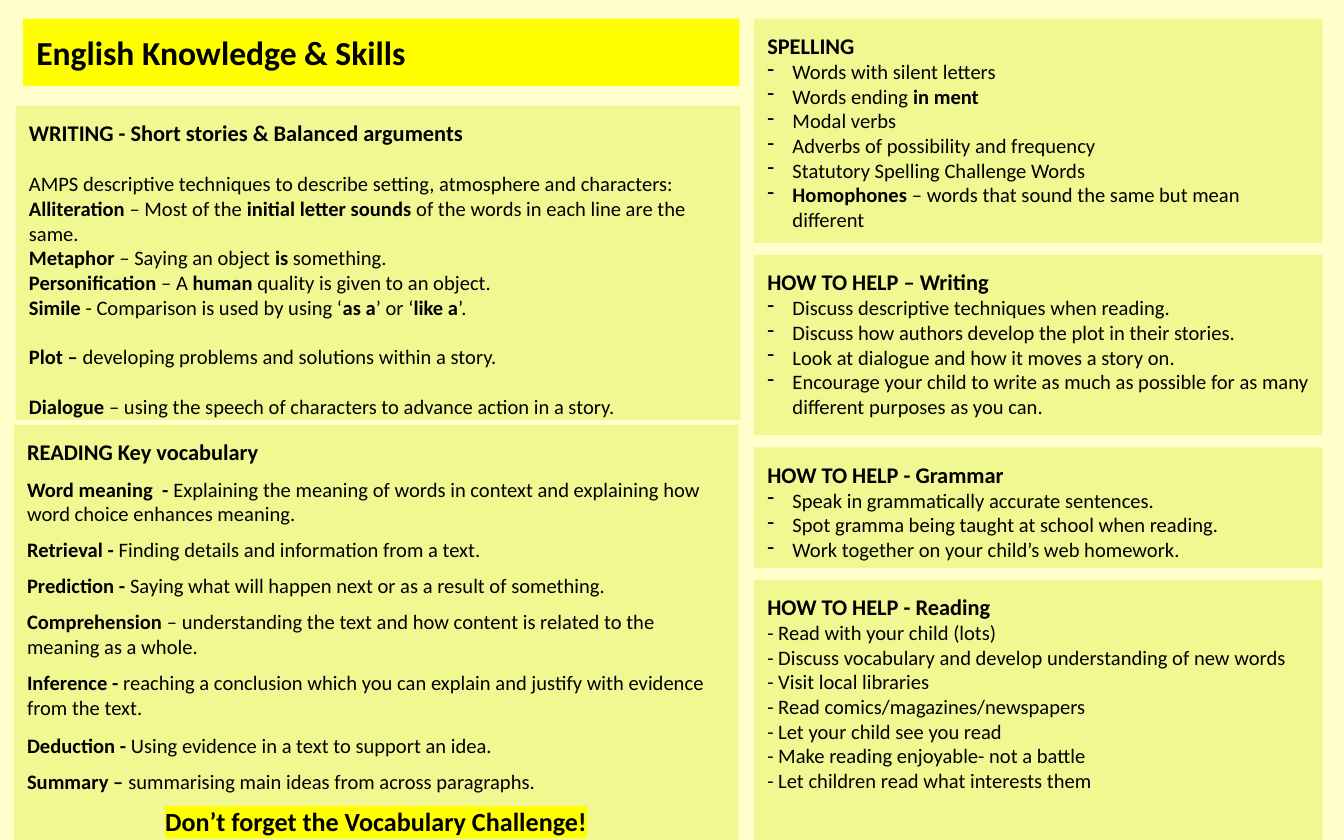
from pptx import Presentation
from pptx.dml.color import RGBColor
from pptx.enum.shapes import MSO_SHAPE
from pptx.enum.text import MSO_ANCHOR, PP_ALIGN
from pptx.util import Pt
from lxml.etree import SubElement
from pptx.oxml.ns import qn
from pptx.oxml import parse_xml

COLORS = {"page": "FFFFCC", "panel": "F1F892", "accent": "FFFF00", "text": "000000"}
FONT = "Calibri"
BODY, HEAD = 11, 12
LINE_GAP, SMALL_GAP = 13.4, 6.1
INDENT = 13.5

# Content: **bold** marks bold text; a (gap, text) pair adds space before
TITLE = "English Knowledge & Skills"
WRITING = ("WRITING - Short stories & Balanced arguments", [
    (LINE_GAP, "AMPS descriptive techniques to describe setting, atmosphere and characters:"),
    "**Alliteration** – Most of the **initial letter sounds** of the words in each line are the same.",
    "**Metaphor** – Saying an object **is** something.",
    "**Personification** – A **human **quality is given to an object.",
    "**Simile** - Comparison is used by using ‘**as a**’ or ‘**like a**’.",
    (LINE_GAP, "**Plot – **developing problems and solutions within a story."),
    (LINE_GAP, "**Dialogue **– using the speech of characters to advance action in a story."),
])
READING = ("READING Key vocabulary", [(SMALL_GAP, text) for text in (
    "**Word meaning  -** Explaining the meaning of words in context and explaining how word choice enhances meaning.",
    "**Retrieval - **Finding details and information from a text.",
    "**Prediction - **Saying what will happen next or as a result of something.",
    "**Comprehension** – understanding the text and how content is related to the meaning as a whole.",
    "**Inference -** reaching a conclusion which you can explain and justify with evidence from the text.",
)] + [
    (7.3, "**Deduction - **Using evidence in a text to support an idea."),
    (SMALL_GAP, "**Summary – **summarising main ideas from across paragraphs."),
])
REMINDER = "**Don’t forget the Vocabulary Challenge!**"

# Right column: height, heading, lines, bulleted
RIGHT = [
    (120.2, "SPELLING", [
        "Words with silent letters",
        "Words ending **in ment**",
        "Modal verbs",
        "Adverbs of possibility and frequency",
        "Statutory Spelling Challenge Words",
        "**Homophones **– words that sound the same but mean different",
    ], True),
    (96.6, "HOW TO HELP – Writing", [
        "Discuss descriptive techniques when reading.",
        "Discuss how authors develop the plot in their stories.",
        "Look at dialogue and how it moves a story on.",
        "Encourage your child to write as much as possible for as many different purposes as you can.",
    ], True),
    (64.6, "HOW TO HELP - Grammar", [
        "Speak in grammatically accurate sentences.",
        "Spot gramma being taught at school when reading.",
        "Work together on your child’s web homework.",
    ], True),
    (139.4, "HOW TO HELP - Reading", [
        "- Read with your child (lots)",
        "- Discuss vocabulary and develop understanding of new words",
        "- Visit local libraries",
        "- Read comics/magazines/newspapers",
        "- Let your child see you read",
        "- Make reading enjoyable- not a battle",
        "- Let children read what interests them",
    ], False),
]
RIGHT_X, RIGHT_W, TOP, PANEL_GAP = 404, 304.6, 10, 6.4


def rgb(name):
    return RGBColor.from_string(COLORS[name])


def add_text(p, text, size):
    for i, part in enumerate(text.split("**")):
        if part:
            r = p.add_run()
            r.text = part
            for key, value in {"name": FONT, "size": Pt(size), "bold": i % 2 == 1}.items():
                setattr(r.font, key, value)
            r.font.color.rgb = rgb("text")


def add_bullet(p):
    pPr = p._p.get_or_add_pPr()
    pPr.set("marL", str(Pt(INDENT)))
    pPr.set("indent", str(-Pt(INDENT)))
    SubElement(pPr, qn("a:buChar")).set("char", "-")


def add_highlight(r, color):
    ns = "http://schemas.openxmlformats.org/drawingml/2006/main"
    fill = r._r.rPr.find(qn("a:solidFill"))
    fill.addnext(parse_xml(f'<a:highlight xmlns:a="{ns}"><a:srgbClr val="{COLORS[color]}"/></a:highlight>'))


def add_panel(s, box, heading, lines=(), bulleted=False, fill="panel", size=HEAD):
    sp = s.shapes.add_shape(MSO_SHAPE.RECTANGLE, *map(Pt, box))
    sp.shadow.inherit = False
    sp.fill.solid()
    sp.fill.fore_color.rgb = rgb(fill)
    sp.line.fill.background()
    tf = sp.text_frame
    inset = Pt(7.2)
    for key, value in {"word_wrap": True, "vertical_anchor": MSO_ANCHOR.TOP,
                       "margin_left": inset, "margin_right": inset,
                       "margin_top": inset, "margin_bottom": inset}.items():
        setattr(tf, key, value)
    p = tf.paragraphs[0]
    p.alignment = PP_ALIGN.LEFT
    add_text(p, f"**{heading}**", size)
    for line in lines:
        gap, text = line if isinstance(line, tuple) else (0, line)
        p = tf.add_paragraph()
        p.alignment = PP_ALIGN.LEFT
        p.space_before = Pt(gap)
        if bulleted:
            add_bullet(p)
        add_text(p, text, BODY)
    return tf


prs = Presentation()
prs.slide_width, prs.slide_height = Pt(720), Pt(450)
s = prs.slides.add_slide(prs.slide_layouts[6])
s.background.fill.solid()
s.background.fill.fore_color.rgb = rgb("page")

# Left column
add_panel(s, (12.4, TOP, 383.8, 36), TITLE, fill="accent", size=18)
add_panel(s, (8.4, 56.8, 388.2, 168.2), *WRITING)
tf = add_panel(s, (7.4, 227.6, 388.2, 222.4), *READING)

# Closing reminder in the reading panel
p = tf.add_paragraph()
p.alignment = PP_ALIGN.CENTER
p.space_before = Pt(SMALL_GAP)
add_text(p, REMINDER, 14)
add_highlight(p.runs[0], "accent")

# Right column, stacked with equal gaps
y = TOP
for height, heading, lines, bulleted in RIGHT:
    add_panel(s, (RIGHT_X, y, RIGHT_W, height), heading, lines, bulleted)
    y += height + PANEL_GAP

prs.save("out.pptx")
